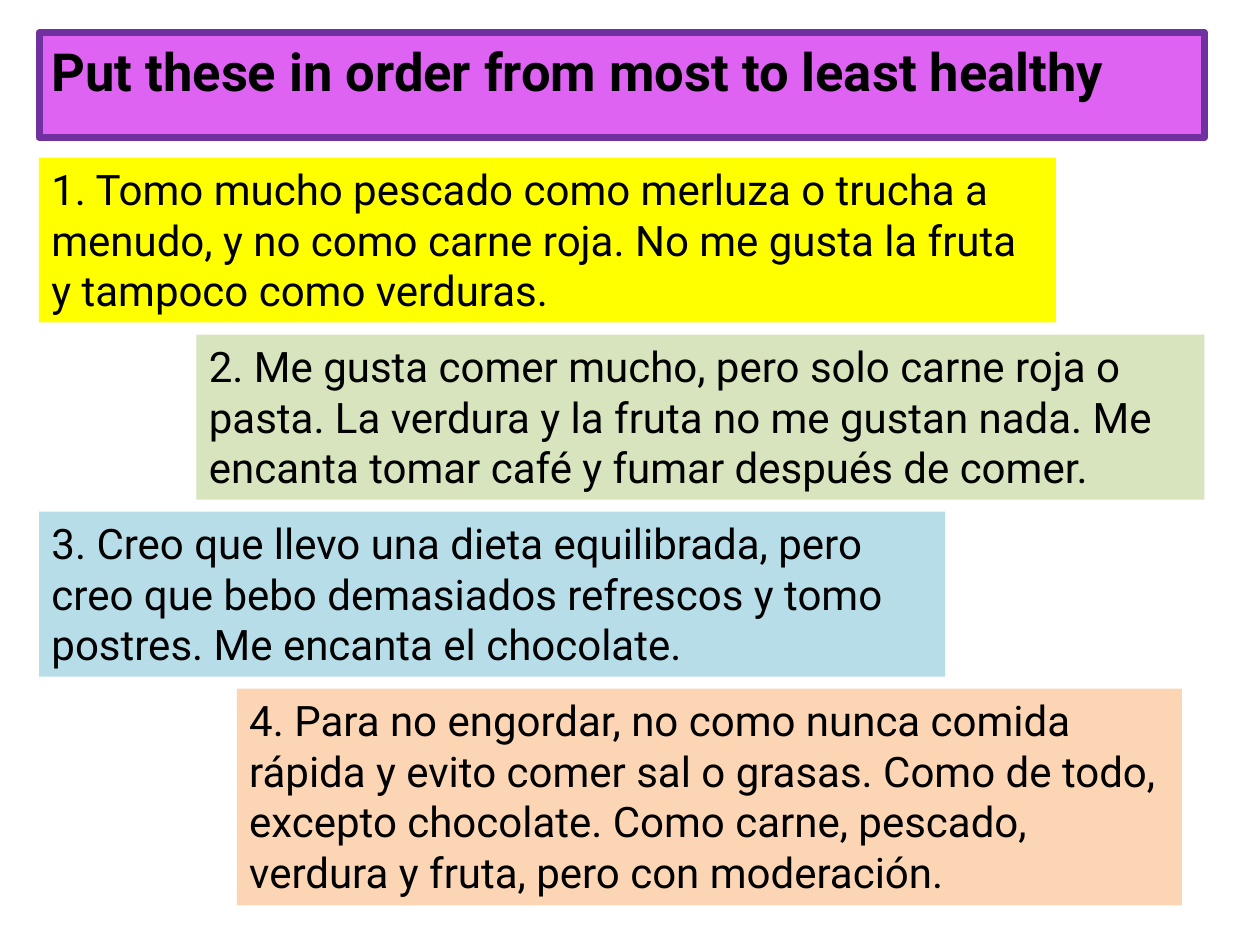
from dataclasses import dataclass

from pptx import Presentation
from pptx.dml.color import RGBColor
from pptx.enum.text import MSO_ANCHOR, MSO_AUTO_SIZE, PP_ALIGN
from pptx.util import Inches, Pt

TOP, LEFT = MSO_ANCHOR.TOP, PP_ALIGN.LEFT
GROW = MSO_AUTO_SIZE.SHAPE_TO_FIT_TEXT
TITLE_ONLY = 5


@dataclass(frozen=True)
class Theme:
    font: str = "Roboto"
    title_size: int = 30
    body_size: int = 24
    ink: str = "000000"
    title_fill: str = "DE63F3"
    title_border: str = "7030A0"
    border_width: int = 4


@dataclass(frozen=True)
class Statement:
    text: str
    left: float
    width: float
    height: float
    fill: str


THEME = Theme()
MARGIN = 0.31
FIRST_TOP, STEP = 1.25, 1.405
THREE_LINES, FOUR_LINES = 1.31, 1.72

STATEMENTS = [
    Statement("1. Tomo mucho pescado como merluza o trucha a menudo, y no como "
              "carne roja. No me gusta la fruta y tampoco como verduras.",
              MARGIN, 8.07, THREE_LINES, "FFFF00"),
    Statement("2. Me gusta comer mucho, pero solo carne roja o pasta. La verdura "
              "y la fruta no me gustan nada. Me encanta tomar café y fumar "
              "después de comer.",
              1.56, 8, THREE_LINES, "D7E4BD"),
    Statement("3. Creo que llevo una dieta equilibrada, pero creo que bebo "
              "demasiados refrescos y tomo postres. Me encanta el chocolate.",
              MARGIN, 7.19, THREE_LINES, "B7DEE8"),
    Statement("4. Para no engordar, no como nunca comida rápida y evito comer "
              "sal o grasas. Como de todo, excepto chocolate. Como carne, "
              "pescado, verdura y fruta, pero con moderación.",
              1.88, 7.5, FOUR_LINES, "FCD5B5"),
]


def fill_and_write(box, text: str, fill: str, size: int, bold: bool = False) -> None:
    """Colour a box and write one left-aligned paragraph in it."""
    box.fill.solid()
    box.fill.fore_color.rgb = RGBColor.from_string(fill)
    frame = box.text_frame
    frame.word_wrap = True
    frame.auto_size = GROW
    frame.vertical_anchor = TOP
    para = frame.paragraphs[0]
    para.alignment = LEFT
    span = para.add_run()
    span.text = text
    span.font.name = THEME.font
    span.font.size = Pt(size)
    span.font.bold = bold
    span.font.color.rgb = RGBColor.from_string(THEME.ink)


def add_statement(page, statement: Statement, top: float) -> None:
    box = page.shapes.add_textbox(Inches(statement.left), Inches(top),
                                  Inches(statement.width), Inches(statement.height))
    fill_and_write(box, statement.text, statement.fill, THEME.body_size)


def set_title(page, text: str) -> None:
    title = page.shapes.title
    title.left, title.top = Inches(MARGIN), Inches(0.26)
    title.width, title.height = Inches(9.25), Inches(0.61)
    fill_and_write(title, text, THEME.title_fill, THEME.title_size, bold=True)
    title.line.color.rgb = RGBColor.from_string(THEME.title_border)
    title.line.width = Pt(THEME.border_width)


def main() -> None:
    deck = Presentation()
    deck.slide_width, deck.slide_height = Inches(10), Inches(7.5)
    page = deck.slides.add_slide(deck.slide_layouts[TITLE_ONLY])

    # Heading
    set_title(page, "Put these in order from most to least healthy")

    # Staggered statements, evenly stepped down the page
    for index, statement in enumerate(STATEMENTS):
        add_statement(page, statement, FIRST_TOP + index * STEP)

    deck.save("out.pptx")


if __name__ == "__main__":
    main()
